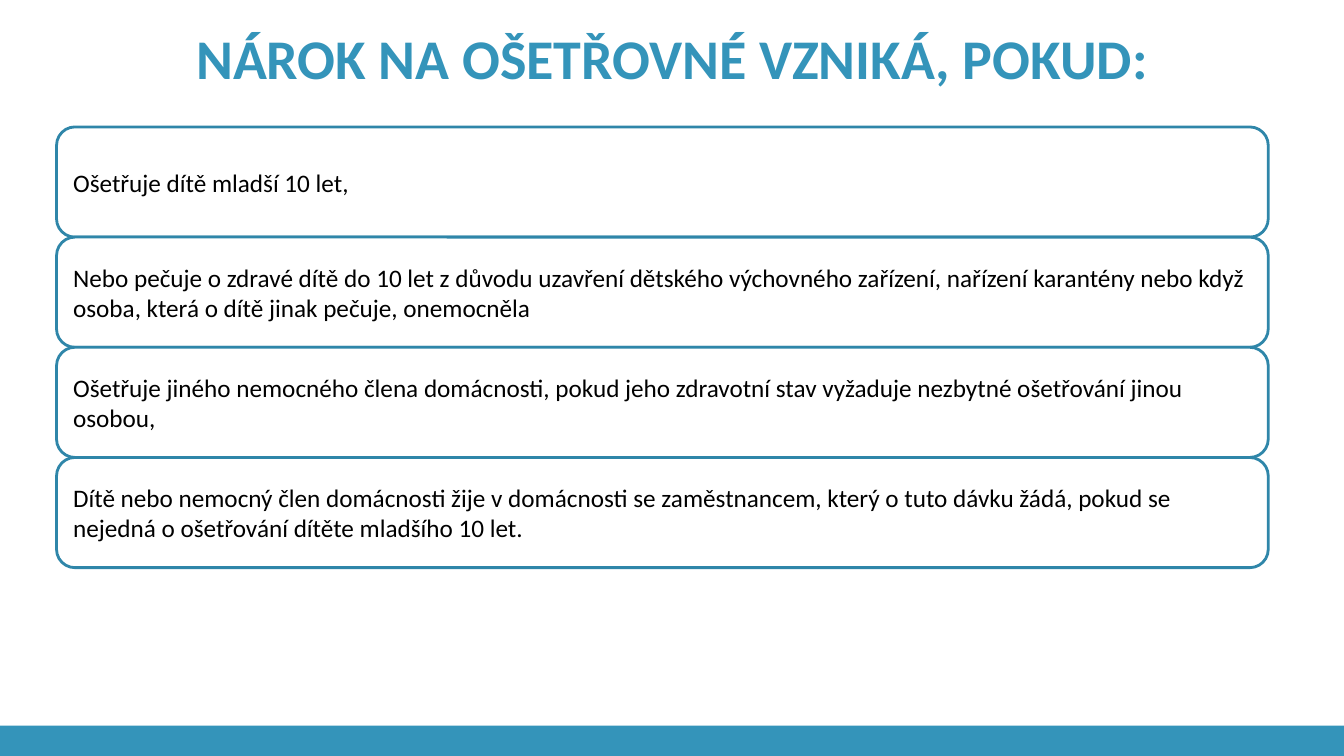
from dataclasses import dataclass

from pptx import Presentation
from pptx.dml.color import RGBColor
from pptx.enum.shapes import MSO_SHAPE
from pptx.enum.text import MSO_ANCHOR, MSO_AUTO_SIZE, PP_ALIGN
from pptx.shapes.autoshape import Shape
from pptx.slide import Slide
from pptx.text.text import TextFrame
from pptx.util import Pt

BLUE = RGBColor(0x34, 0x94, 0xBA)
OUTLINE = RGBColor(0x2F, 0x86, 0xA9)
WHITE = RGBColor(0xFF, 0xFF, 0xFF)
BLACK = RGBColor(0x00, 0x00, 0x00)

FONT = "Calibri"
SLIDE_WIDTH, SLIDE_HEIGHT = 960, 540
FOOTER_HEIGHT = 21.6
CARD_LEFT, CARDS_TOP = 40.4, 90.7
CARD_WIDTH, CARD_HEIGHT = 865.5, 78.7

TITLE = "NÁROK NA OŠETŘOVNÉ VZNIKÁ, POKUD:"
CONDITIONS = (
    "Ošetřuje dítě mladší 10 let,",
    "Nebo pečuje o zdravé dítě do 10 let z důvodu uzavření dětského výchovného "
    "zařízení, nařízení karantény nebo když osoba, která o dítě jinak pečuje, onemocněla",
    "Ošetřuje jiného nemocného člena domácnosti, pokud jeho zdravotní stav vyžaduje "
    "nezbytné ošetřování jinou osobou,",
    "Dítě nebo nemocný člen domácnosti žije v domácnosti se zaměstnancem, který o tuto "
    "dávku žádá, pokud se nejedná o ošetřování dítěte mladšího 10 let.",
)


@dataclass(frozen=True)
class Box:
    """A rectangle in points."""

    left: float
    top: float
    width: float
    height: float


@dataclass(frozen=True)
class TextStyle:
    size: float
    color: RGBColor
    bold: bool
    align: PP_ALIGN
    anchor: MSO_ANCHOR
    margins: tuple[float, float, float, float]  # left, top, right, bottom


TITLE_STYLE = TextStyle(40, BLUE, True, PP_ALIGN.CENTER, MSO_ANCHOR.BOTTOM, (0, 3.6, 0, 0))
CARD_STYLE = TextStyle(18, BLACK, False, PP_ALIGN.LEFT, MSO_ANCHOR.MIDDLE, (8, 4, 8, 4))


def write_text(frame: TextFrame, text: str, style: TextStyle) -> None:
    frame.text = text
    frame.word_wrap = True
    frame.auto_size = MSO_AUTO_SIZE.NONE
    frame.vertical_anchor = style.anchor
    frame.margin_left, frame.margin_top, frame.margin_right, frame.margin_bottom = map(
        Pt, style.margins
    )
    paragraph = frame.paragraphs[0]
    paragraph.alignment = style.align
    font = paragraph.runs[0].font
    font.name = FONT
    font.size = Pt(style.size)
    font.bold = style.bold
    font.color.rgb = style.color


def place_title(slide: Slide, box: Box) -> None:
    title = slide.shapes.title
    title.left, title.top = Pt(box.left), Pt(box.top)
    title.width, title.height = Pt(box.width), Pt(box.height)
    write_text(title.text_frame, TITLE, TITLE_STYLE)


def add_filled_shape(slide: Slide, kind: MSO_SHAPE, box: Box, fill: RGBColor) -> Shape:
    shape = slide.shapes.add_shape(
        kind, Pt(box.left), Pt(box.top), Pt(box.width), Pt(box.height)
    )
    shape.shadow.inherit = False
    shape.fill.solid()
    shape.fill.fore_color.rgb = fill
    shape.line.fill.background()
    return shape


def add_card(slide: Slide, box: Box, text: str) -> None:
    card = add_filled_shape(slide, MSO_SHAPE.ROUNDED_RECTANGLE, box, WHITE)
    card.line.color.rgb = OUTLINE
    card.line.width = Pt(2)
    write_text(card.text_frame, text, CARD_STYLE)


def main() -> None:
    presentation = Presentation()
    presentation.slide_width = Pt(SLIDE_WIDTH)
    presentation.slide_height = Pt(SLIDE_HEIGHT)
    title_only = presentation.slide_layouts.get_by_name("Title Only")
    slide = presentation.slides.add_slide(title_only)

    place_title(slide, Box(0, 12.2, SLIDE_WIDTH, 52.6))
    for index, condition in enumerate(CONDITIONS):
        top = CARDS_TOP + index * CARD_HEIGHT
        add_card(slide, Box(CARD_LEFT, top, CARD_WIDTH, CARD_HEIGHT), condition)
    footer = Box(0, SLIDE_HEIGHT - FOOTER_HEIGHT, SLIDE_WIDTH, FOOTER_HEIGHT)
    add_filled_shape(slide, MSO_SHAPE.RECTANGLE, footer, BLUE)

    presentation.save("out.pptx")


if __name__ == "__main__":
    main()
